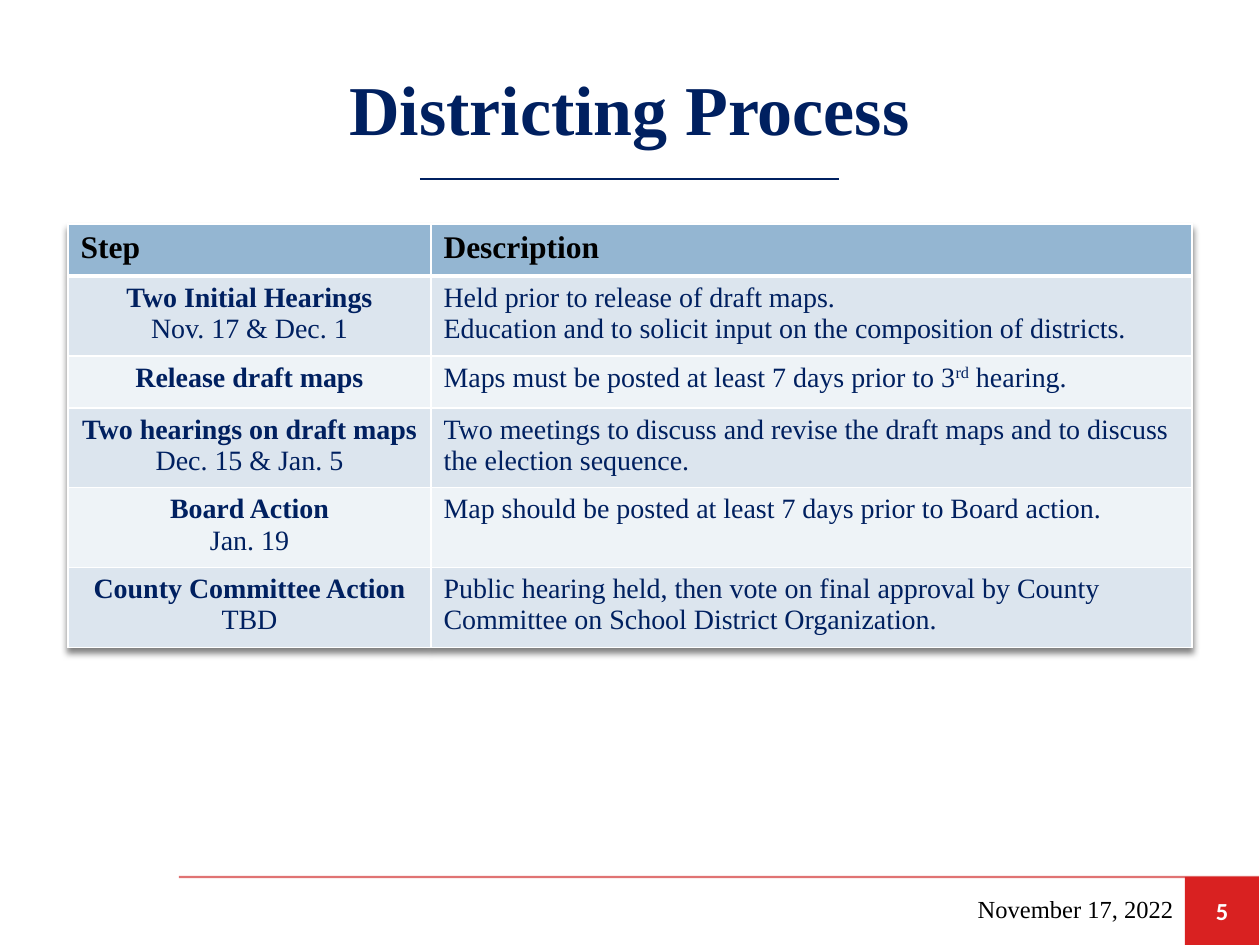
from lxml import etree
from pptx import Presentation
from pptx.dml.color import RGBColor
from pptx.enum.shapes import MSO_CONNECTOR, MSO_SHAPE
from pptx.enum.text import MSO_ANCHOR as Anchor, PP_ALIGN as Align
from pptx.oxml import parse_xml
from pptx.oxml.ns import nsdecls, qn
from pptx.util import Emu, Pt

SCALE = 914400 / 126
SERIF = "Times New Roman"
NAVY, BLACK, WHITE, RED = "002060", "000000", "FFFFFF", "D92121"


def px(length):
    return Emu(round(length * SCALE))


def write(paragraph, text, size, color, bold=False, font=SERIF, align=Align.LEFT):
    paragraph.alignment = align
    run = paragraph.add_run()
    run.text = text
    run.font.name = font
    run.font.size = Pt(size)
    run.font.bold = bold
    run.font.color.rgb = RGBColor.from_string(color)
    return run


presentation = Presentation()
presentation.slide_width = px(1260)
presentation.slide_height = px(945)
slide = presentation.slides.add_slide(presentation.slide_layouts[6])

for left, right, y, color, width, alpha in [
    (179, 1259, 877, "C80000", 1.25, 55),
    (420, 839, 179, NAVY, 0.75, 100),
]:
    rule = slide.shapes.add_connector(MSO_CONNECTOR.STRAIGHT, px(left), px(y), px(right), px(y))
    rule.line.color.rgb = RGBColor.from_string(color)
    rule.line.width = Pt(width)
    properties = rule._element.spPr
    etree.SubElement(properties, qn("a:effectLst"))
    for tint in properties.iter(qn("a:srgbClr")):
        etree.SubElement(tint, qn("a:alpha"), val=str(alpha * 1000))

badge = slide.shapes.add_shape(MSO_SHAPE.RECTANGLE, px(1185), px(877), px(74), px(68))
badge.shadow.inherit = False
badge.fill.solid()
badge.fill.fore_color.rgb = RGBColor.from_string(RED)
badge.line.fill.background()
badge.text_frame.vertical_anchor = Anchor.MIDDLE
write(badge.text_frame.paragraphs[0], "5", 14, WHITE, True, "Calibri", Align.CENTER)

for text, left, top, width, height, size, color, bold, align in [
    ("Districting Process", 47, 40, 1165, 136, 40, NAVY, True, Align.CENTER),
    ("November 17, 2022", 818, 884, 368, 50, 14, BLACK, False, Align.RIGHT),
]:
    box = slide.shapes.add_textbox(px(left), px(top), px(width), px(height))
    box.text_frame.word_wrap = True
    box.text_frame.vertical_anchor = Anchor.MIDDLE
    write(box.text_frame.paragraphs[0], text, size, color, bold, align=align)

steps = [
    (["Step"], [["Description"]]),
    (["Two Initial Hearings", "Nov. 17 & Dec. 1"],
     [["Held prior to release of draft maps."],
      ["Education and to solicit input on the composition of districts."]]),
    (["Release draft maps"],
     [["Maps must be posted at least 7 days prior to 3", "rd", " hearing."]]),
    (["Two hearings on draft maps", "Dec. 15 & Jan. 5"],
     [["Two meetings to discuss and revise the draft maps and to discuss the election sequence."]]),
    (["Board Action", "Jan. 19"],
     [["Map should be posted at least 7 days prior to Board action."]]),
    (["County Committee Action", "TBD"],
     [["Public hearing held, then vote on final approval by County "
       "Committee on School District Organization."]]),
]
heights = [75 if len(step) == 2 else 52 for step, description in steps]
frame = slide.shapes.add_table(len(steps), 2, px(68), px(224), px(1124), px(sum(heights)))
table = frame.table
table.columns[0].width = px(363)
table.columns[1].width = px(761)
table._tbl.tblPr.insert(0, parse_xml(
    f'<a:effectLst {nsdecls("a")}><a:outerShdw blurRad="50800" dist="38100" dir="5400000" '
    'rotWithShape="0"><a:srgbClr val="000000"><a:alpha val="50000"/></a:srgbClr>'
    '</a:outerShdw></a:effectLst>'))

for row, (step, description) in enumerate(steps):
    table.rows[row].height = px(heights[row])
    header = row == 0
    fill = "94B6D2" if header else ("EEF3F7", "DCE5EE")[row % 2]
    size, color = (18, BLACK) if header else (16, NAVY)
    for column, lines in enumerate([[[line] for line in step], description]):
        cell = table.cell(row, column)
        cell.fill.solid()
        cell.fill.fore_color.rgb = RGBColor.from_string(fill)
        borders = {"lnL": 1, "lnR": 1, "lnT": 3 if row == 1 else 1, "lnB": 3 if header else 1}
        for index, (side, width) in enumerate(borders.items()):
            cell._tc.get_or_add_tcPr().insert(index, parse_xml(
                f'<a:{side} {nsdecls("a")} w="{Pt(width)}"><a:solidFill>'
                f'<a:srgbClr val="{WHITE}"/></a:solidFill></a:{side}>'))
        align = Align.LEFT if header or column else Align.CENTER
        text_frame = cell.text_frame
        for number, parts in enumerate(lines):
            paragraph = text_frame.add_paragraph() if number else text_frame.paragraphs[0]
            bold = header or (column == 0 and number == 0)
            for part in parts:
                run = write(paragraph, part, size, color, bold, align=align)
                if part == "rd":
                    run._r.get_or_add_rPr().set("baseline", "30000")

presentation.save("out.pptx")
